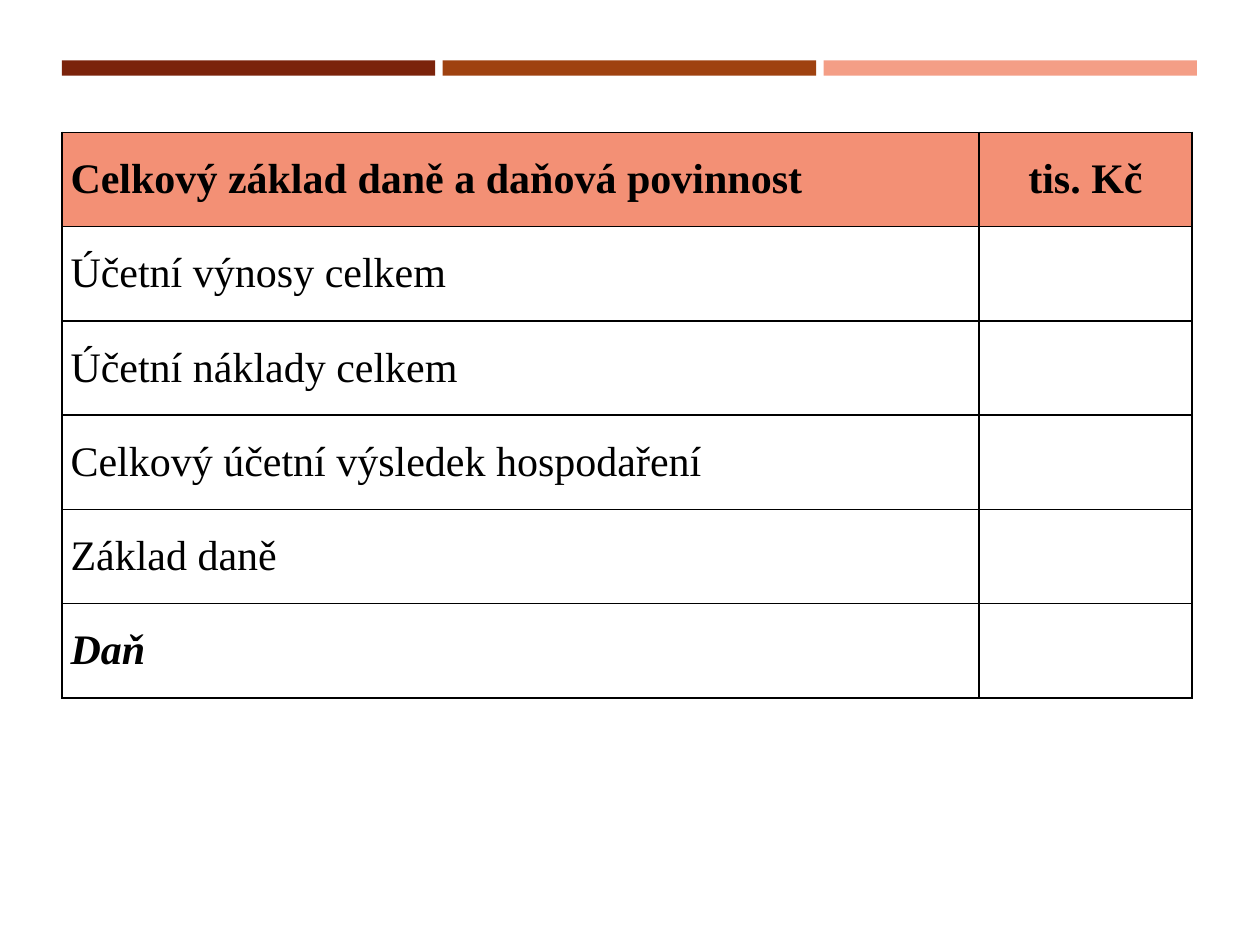
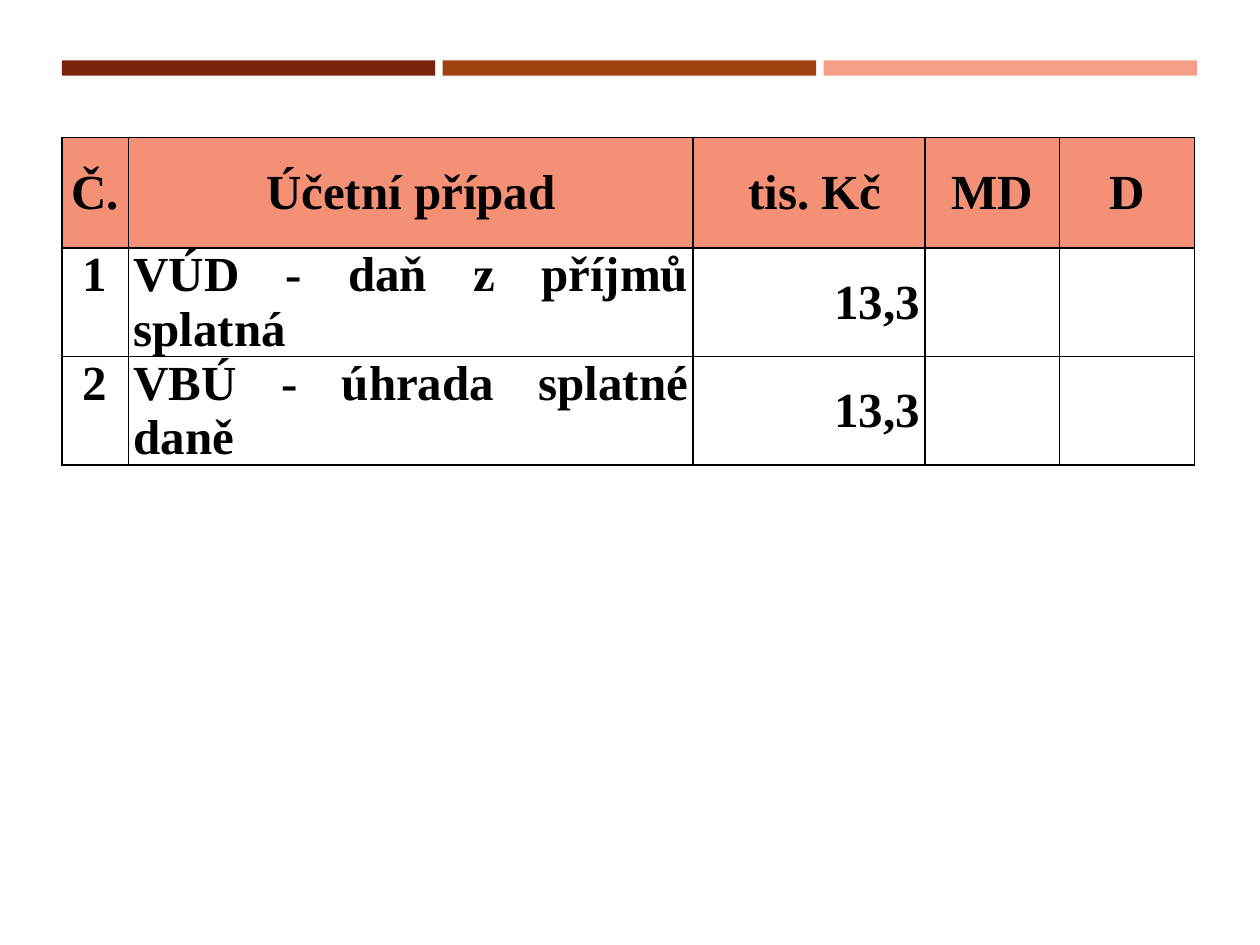
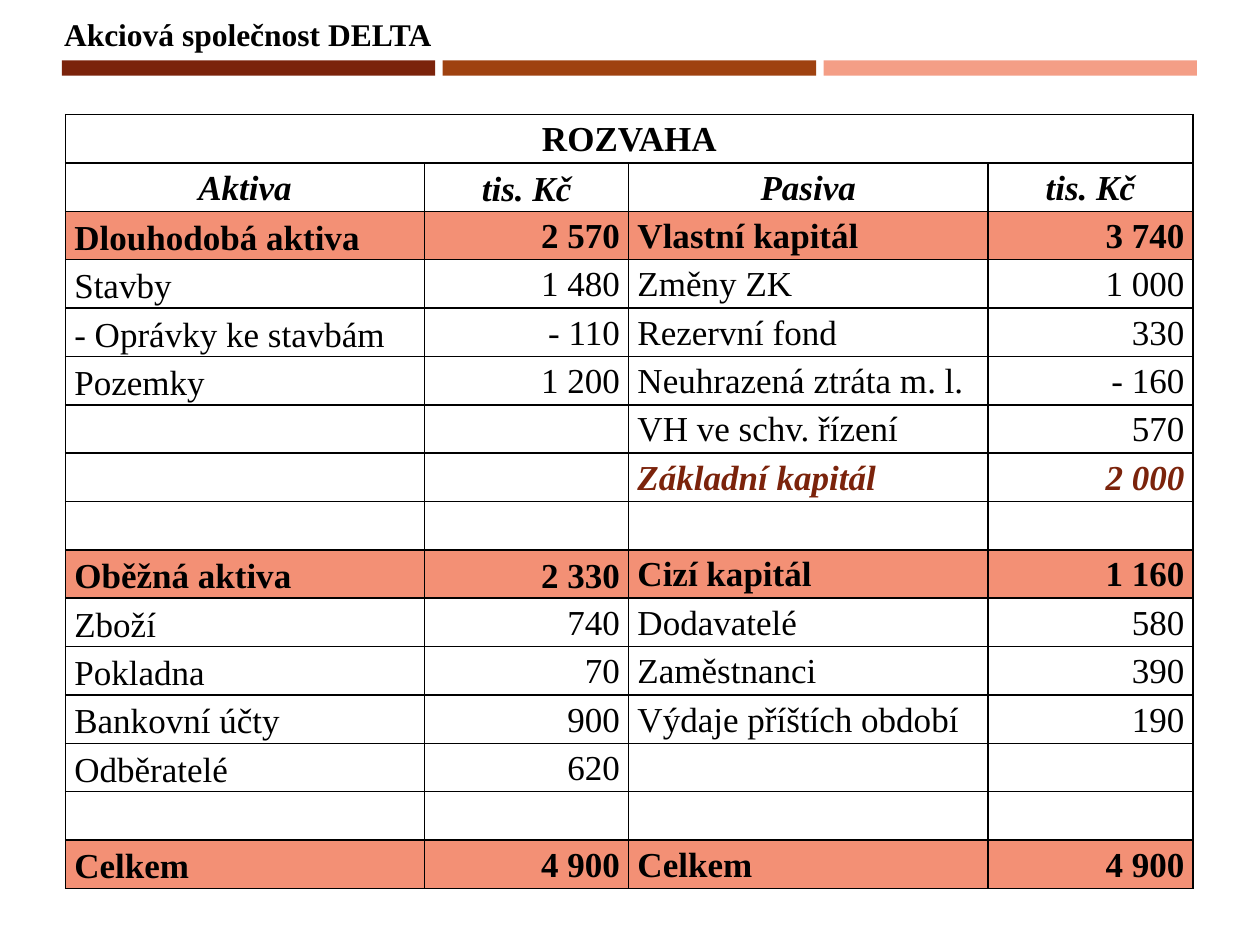
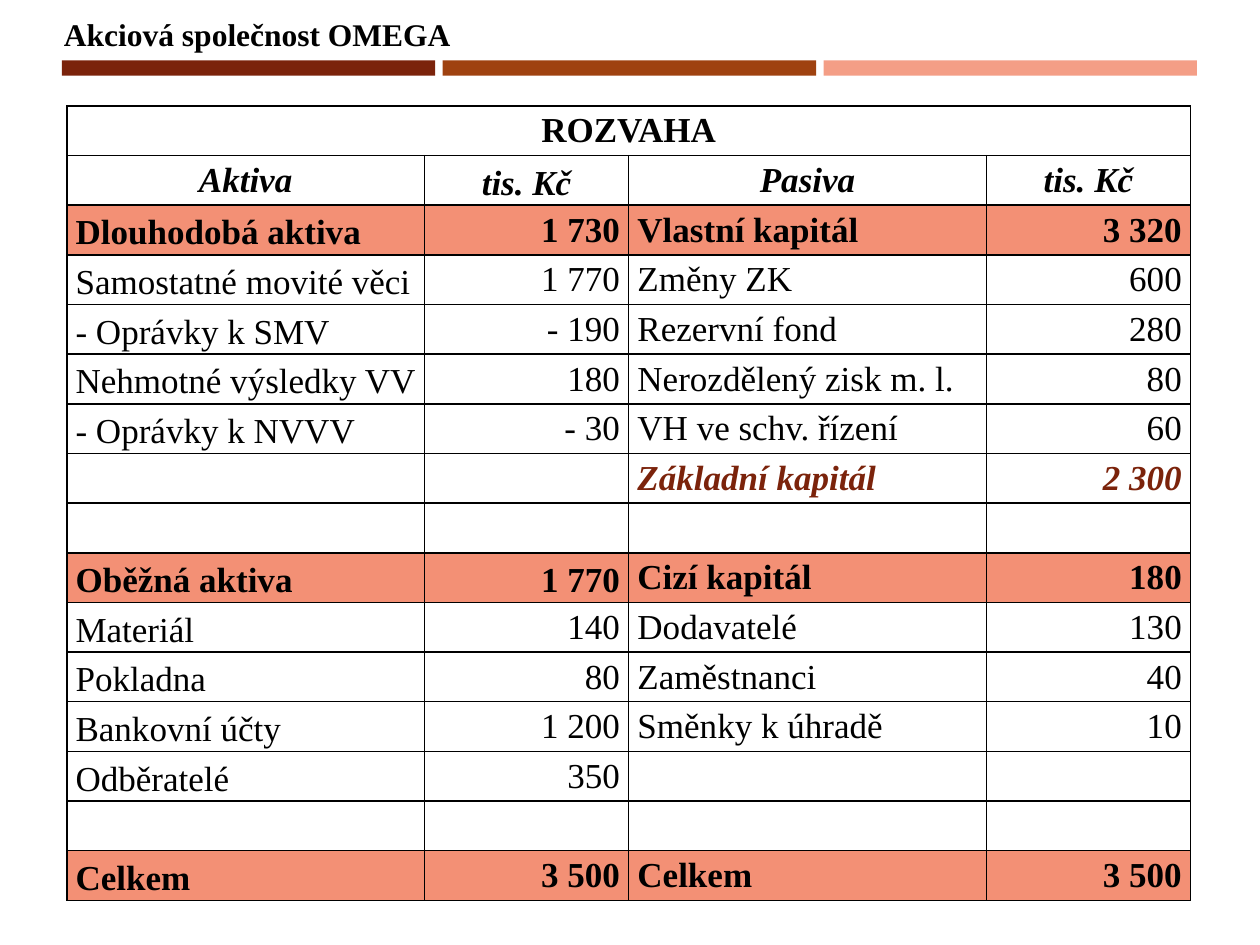
"""Build four slides of Czech accounting tables."""
from dataclasses import dataclass, replace
from typing import Callable, Optional

from lxml import etree
from pptx import Presentation
from pptx.dml.color import RGBColor
from pptx.enum.shapes import MSO_SHAPE
from pptx.enum.text import MSO_ANCHOR, MSO_AUTO_SIZE, PP_ALIGN
from pptx.oxml.ns import qn
from pptx.slide import Slide
from pptx.table import Table, _Cell
from pptx.util import Inches, Pt

RECTANGLE = MSO_SHAPE.RECTANGLE
TOP, MIDDLE = MSO_ANCHOR.TOP, MSO_ANCHOR.MIDDLE
LEFT, CENTER, RIGHT, JUSTIFY = PP_ALIGN.LEFT, PP_ALIGN.CENTER, PP_ALIGN.RIGHT, PP_ALIGN.JUSTIFY
FIT_SHAPE = MSO_AUTO_SIZE.SHAPE_TO_FIT_TEXT

Rows = list[tuple[str, ...]]


@dataclass(frozen=True)
class Theme:
    """Colours, font and type sizes of the presentation."""

    font: str = "Times New Roman"
    text: str = "000000"
    accent: str = "7B230B"
    highlight: str = "F39075"
    border: str = "000000"
    bands: tuple[str, ...] = ("7B230B", "9F4210", "F49E86")
    title_size: int = 18
    balance_size: int = 20
    tax_size: int = 24
    entries_size: int = 28
    border_width: int = 1


THEME = Theme()


@dataclass(frozen=True)
class CellStyle:
    """Appearance of one table cell."""

    size: int
    align: PP_ALIGN = LEFT
    anchor: MSO_ANCHOR = MIDDLE
    bold: bool = False
    italic: bool = False
    color: str = THEME.text
    fill: Optional[str] = None
    inset: float = 0.07
    line_spacing: Optional[float] = None


StyleRule = Callable[[int, int, Rows], CellStyle]


@dataclass(frozen=True)
class TableLayout:
    """Place, column widths and row heights of a table, in inches."""

    left: float
    top: float
    columns: tuple[float, ...]
    heights: tuple[float, ...]


@dataclass(frozen=True)
class TableSlide:
    """Content of one slide: a table and an optional title."""

    layout: TableLayout
    rows: Rows
    style_rule: StyleRule
    title: str = ""
    title_width: float = 0


def equal_rows(height: float, count: int) -> tuple[float, ...]:
    """Divide a table height into equal rows."""
    return (height / count,) * count


def tax_style(row: int, column: int, rows: Rows) -> CellStyle:
    """Style the tax base table."""
    if row == 0:
        return CellStyle(THEME.tax_size, CENTER if column else LEFT, bold=True, fill=THEME.highlight)
    result = row == len(rows) - 1
    return CellStyle(THEME.tax_size, JUSTIFY, bold=result, italic=result)


def entries_style(row: int, column: int, rows: Rows) -> CellStyle:
    """Style the table of accounting entries."""
    style = CellStyle(THEME.entries_size, CENTER, bold=True, inset=0.04)
    if row == 0:
        return replace(style, fill=THEME.highlight)
    if column == 0:
        return replace(style, anchor=TOP)
    return replace(style, align=(CENTER, JUSTIFY, RIGHT, CENTER, CENTER)[column])


def balance_style(row: int, column: int, rows: Rows) -> CellStyle:
    """Style a balance sheet."""
    style = CellStyle(THEME.balance_size, (LEFT, RIGHT, JUSTIFY, RIGHT)[column],
                      MIDDLE if column == 0 else TOP, line_spacing=1.15)
    if row < 2:
        return replace(style, align=CENTER, anchor=MIDDLE if (row, column) == (1, 1) else TOP,
                       bold=True, italic=row == 1)
    if rows[row][0] in ("Dlouhodobá aktiva", "Oběžná aktiva", "Celkem"):
        current_assets_total = rows[row][0] == "Oběžná aktiva" and column == 1
        return replace(style, bold=True, fill=THEME.highlight,
                       anchor=MIDDLE if current_assets_total else style.anchor)
    if rows[row][2] == "Základní kapitál":
        return replace(style, bold=True, italic=True, color=THEME.accent)
    return style


EMPTY_ROW = ("", "", "", "")
BALANCE_HEADER = [("ROZVAHA", "", "", ""), ("Aktiva", "tis. Kč", "Pasiva", "tis. Kč")]

TAX_ROWS = [
    ("Celkový základ daně a daňová povinnost", "tis. Kč"),
    ("Účetní výnosy celkem", ""),
    ("Účetní náklady celkem", ""),
    ("Celkový účetní výsledek hospodaření", ""),
    ("Základ daně", ""),
    ("Daň", ""),
]

ENTRY_ROWS = [
    ("Č.", "Účetní případ", " tis. Kč", "MD", "D"),
    ("1", "VÚD - daň z příjmů splatná", "13,3", "", ""),
    ("2", "VBÚ - úhrada splatné daně", "13,3", "", ""),
]

DELTA_ROWS = BALANCE_HEADER + [
    ("Dlouhodobá aktiva", "2 570", "Vlastní kapitál", "3 740"),
    ("Stavby", "1 480", "Změny ZK", "1 000"),
    ("- Oprávky ke stavbám", "- 110", "Rezervní fond", "330"),
    ("Pozemky", "1 200", "Neuhrazená ztráta m. l.", "- 160"),
    ("", "", "VH ve schv. řízení", "570"),
    ("", "", "Základní kapitál", "2 000"),
    EMPTY_ROW,
    ("Oběžná aktiva", "2 330", "Cizí kapitál", "1 160"),
    ("Zboží", "740", "Dodavatelé", "580"),
    ("Pokladna", "70", "Zaměstnanci", "390"),
    ("Bankovní účty", "900", "Výdaje příštích období", "190"),
    ("Odběratelé", "620", "", ""),
    EMPTY_ROW,
    ("Celkem", "4 900", "Celkem", "4 900"),
]

OMEGA_ROWS = BALANCE_HEADER + [
    ("Dlouhodobá aktiva", "1 730", "Vlastní kapitál", "3 320"),
    ("Samostatné movité věci", "1 770", "Změny ZK", "600"),
    ("- Oprávky k SMV", "- 190", "Rezervní fond", "280"),
    ("Nehmotné výsledky VV", "180", "Nerozdělený zisk m. l.", "80"),
    ("- Oprávky k NVVV", "- 30", "VH ve schv. řízení", "60"),
    ("", "", "Základní kapitál", "2 300"),
    EMPTY_ROW,
    ("Oběžná aktiva", "1 770", "Cizí kapitál", "180"),
    ("Materiál", "140", "Dodavatelé", "130"),
    ("Pokladna", "80", "Zaměstnanci", "40"),
    ("Bankovní účty", "1 200", "Směnky k úhradě", "10"),
    ("Odběratelé", "350", "", ""),
    EMPTY_ROW,
    ("Celkem", "3 500", "Celkem", "3 500"),
]

SLIDES = [
    TableSlide(TableLayout(0.49, 1.05, (7.28, 1.69), equal_rows(4.49, len(TAX_ROWS))),
               TAX_ROWS, tax_style),
    TableSlide(TableLayout(0.49, 1.09, (0.53, 4.48, 1.84, 1.07, 1.07), (0.88, 0.86, 0.86)),
               ENTRY_ROWS, entries_style),
    TableSlide(TableLayout(0.52, 0.91, (2.85, 1.62, 2.85, 1.63), equal_rows(6.13, len(DELTA_ROWS))),
               DELTA_ROWS, balance_style, "Akciová společnost DELTA", 3.15),
    TableSlide(TableLayout(0.53, 0.84, (2.84, 1.62, 2.84, 1.62), equal_rows(6.31, len(OMEGA_ROWS))),
               OMEGA_ROWS, balance_style, "Akciová společnost OMEGA", 3.3),
]


def draw_bands(slide: Slide) -> None:
    """Draw the three equal colour bands at the top."""
    left, total, gap = 0.49, 9.01, 0.06
    count = len(THEME.bands)
    width = (total - gap * (count - 1)) / count
    for index, color in enumerate(THEME.bands):
        band = slide.shapes.add_shape(RECTANGLE, Inches(left + index * (width + gap)),
                                      Inches(0.48), Inches(width), Inches(0.12))
        band.shadow.inherit = False
        band.fill.solid()
        band.fill.fore_color.rgb = RGBColor.from_string(color)
        band.line.fill.background()


def draw_title(slide: Slide, title: str, width: float) -> None:
    """Write the company title above the bands."""
    box = slide.shapes.add_textbox(Inches(0.41), Inches(0.07), Inches(width), Inches(0.4))
    box.text_frame.word_wrap = False
    box.text_frame.auto_size = FIT_SHAPE
    paragraph = box.text_frame.paragraphs[0]
    paragraph.text = title
    paragraph.font.name = THEME.font
    paragraph.font.size = Pt(THEME.title_size)
    paragraph.font.bold = True
    paragraph.font.color.rgb = RGBColor.from_string(THEME.text)


def set_borders(cell: _Cell) -> None:
    """Give a cell a solid line on all four sides."""
    properties = cell._tc.get_or_add_tcPr()
    for position, side in enumerate(("a:lnL", "a:lnR", "a:lnT", "a:lnB")):
        line = etree.Element(qn(side), w=str(Pt(THEME.border_width)))
        fill = etree.SubElement(line, qn("a:solidFill"))
        etree.SubElement(fill, qn("a:srgbClr"), val=THEME.border)
        properties.insert(position, line)


def format_cell(cell: _Cell, text: str, style: CellStyle) -> None:
    """Write and style one cell."""
    cell.margin_left = cell.margin_right = Inches(style.inset)
    cell.margin_top = cell.margin_bottom = 0
    cell.vertical_anchor = style.anchor
    if style.fill:
        cell.fill.solid()
        cell.fill.fore_color.rgb = RGBColor.from_string(style.fill)
    else:
        cell.fill.background()
    set_borders(cell)
    if not text:
        return
    paragraph = cell.text_frame.paragraphs[0]
    paragraph.text = text
    paragraph.alignment = style.align
    paragraph.line_spacing = style.line_spacing
    paragraph.font.name = THEME.font
    paragraph.font.size = Pt(style.size)
    paragraph.font.bold = style.bold
    paragraph.font.italic = style.italic
    paragraph.font.color.rgb = RGBColor.from_string(style.color)


def draw_table(slide: Slide, content: TableSlide) -> Table:
    """Draw a bordered table and return it."""
    layout = content.layout
    frame = slide.shapes.add_table(len(layout.heights), len(layout.columns),
                                   Inches(layout.left), Inches(layout.top),
                                   Inches(sum(layout.columns)), Inches(sum(layout.heights)))
    table = frame.table
    table.first_row = table.horz_banding = False
    for column, width in zip(table.columns, layout.columns):
        column.width = Inches(width)
    for row, height in zip(table.rows, layout.heights):
        row.height = Inches(height)
    for row_index, row_texts in enumerate(content.rows):
        for column_index, text in enumerate(row_texts):
            format_cell(table.cell(row_index, column_index), text,
                        content.style_rule(row_index, column_index, content.rows))
    return table


def main() -> None:
    """Build and save the presentation."""
    presentation = Presentation()
    presentation.slide_width, presentation.slide_height = Inches(10), Inches(7.5)
    blank_layout = presentation.slide_layouts[6]
    for content in SLIDES:
        slide = presentation.slides.add_slide(blank_layout)
        draw_bands(slide)
        if content.title:
            draw_title(slide, content.title, content.title_width)
        table = draw_table(slide, content)
        if content.style_rule is balance_style:
            table.cell(0, 0).merge(table.cell(0, len(table.columns) - 1))
    presentation.save("out.pptx")


if __name__ == "__main__":
    main()
